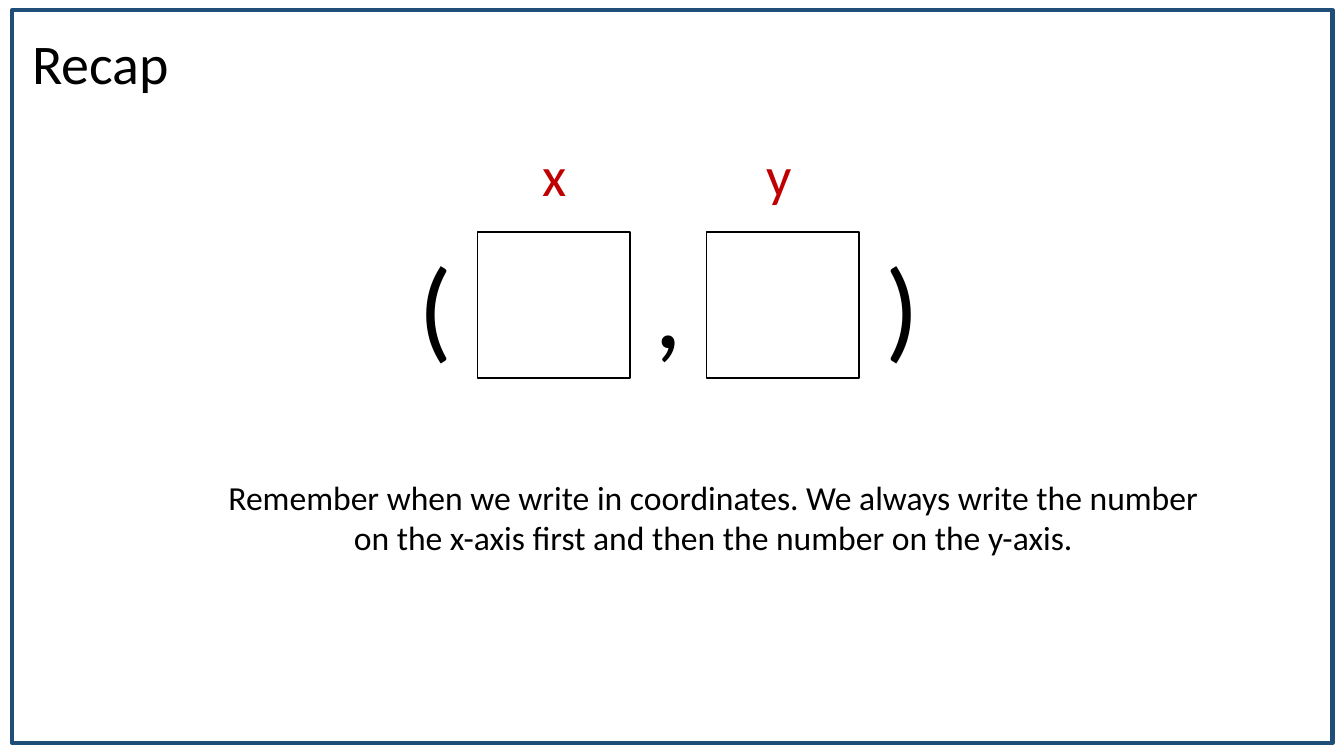
from lxml.etree import SubElement
from pptx import Presentation
from pptx.dml.color import RGBColor
from pptx.enum.shapes import MSO_SHAPE
from pptx.enum.text import MSO_AUTO_SIZE, PP_ALIGN
from pptx.oxml.ns import qn
from pptx.util import Inches, Pt

BLACK = RGBColor(0x00, 0x00, 0x00)
RED = RGBColor(0xC0, 0x00, 0x00)
NAVY = RGBColor(0x1F, 0x4E, 0x79)


class SlideBuilder:
    """Places elements in percent of the slide's width and height."""

    font_name = "Calibri"

    def __init__(self, presentation):
        self.column = presentation.slide_width / 100
        self.row = presentation.slide_height / 100
        self.slide = presentation.slides.add_slide(presentation.slide_layouts[6])

    def place(self, left, top, width, height):
        return (round(left * self.column), round(top * self.row),
                round(width * self.column), round(height * self.row))

    def outline(self, area, color, weight):
        shape = self.slide.shapes.add_shape(MSO_SHAPE.RECTANGLE, *self.place(*area))
        shape.shadow.inherit = False
        shape.fill.background()
        shape.line.color.rgb = color
        shape.line.width = Pt(weight)

    def text(self, area, text, size, color=BLACK, wrap=False,
             alignment=PP_ALIGN.LEFT, tabs=()):
        """Add a text box; tabs are tab stops in columns."""
        frame = self.slide.shapes.add_textbox(*self.place(*area)).text_frame
        frame.word_wrap = wrap
        frame.auto_size = MSO_AUTO_SIZE.SHAPE_TO_FIT_TEXT
        paragraph = frame.paragraphs[0]
        paragraph.text = text
        paragraph.alignment = alignment
        paragraph.font.name = self.font_name
        paragraph.font.size = Pt(size)
        paragraph.font.color.rgb = color
        if tabs:
            properties = paragraph._p.get_or_add_pPr()
            tab_list = SubElement(properties, qn("a:tabLst"))
            properties.insert_element_before(tab_list, "a:defRPr", "a:extLst")
            for position in tabs:
                SubElement(tab_list, qn("a:tab"), algn="l",
                           pos=str(round(position * self.column)))


def main():
    presentation = Presentation()
    presentation.slide_width = Inches(13.33)
    presentation.slide_height = Inches(7.5)
    builder = SlideBuilder(presentation)

    builder.outline((0.9, 1.33, 98.25, 96.93), NAVY, 3)
    builder.text((1.65, 3.07, 11.78, 10.27), "Recap", 40)

    builder.text((30.38, 30.67, 39.23, 19.33), "(\t,\t)", 80,
                 wrap=True, tabs=(17.6, 34.75))
    for axis, label_left, box_left in (("x", 39.6, 35.55), ("y", 56.33, 52.58)):
        builder.text((label_left, 17.87, 3.4, 10.27), axis, 40, RED)
        builder.outline((box_left, 30.67, 11.33, 19.33), BLACK, 1)

    builder.text((15.98, 62.4, 74.19, 12.13),
                 "Remember when we write in coordinates. We always write the number "
                 "on the x-axis first and then the number on the y-axis.",
                 24, wrap=True, alignment=PP_ALIGN.CENTER)

    presentation.save("out.pptx")


if __name__ == "__main__":
    main()
